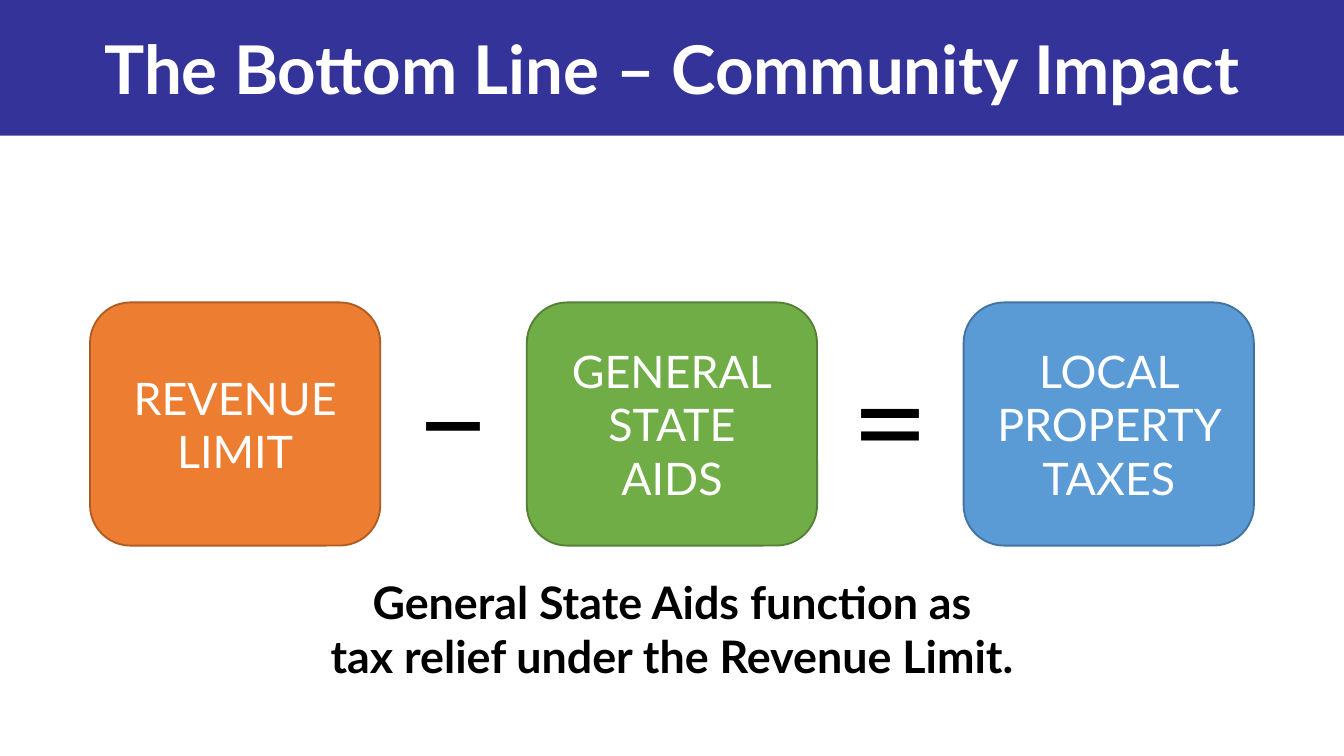
from dataclasses import dataclass

from pptx import Presentation
from pptx.dml.color import RGBColor
from pptx.enum.shapes import MSO_SHAPE
from pptx.enum.text import MSO_ANCHOR, PP_ALIGN
from pptx.util import Inches, Pt

RECT = MSO_SHAPE.RECTANGLE
ROUNDED = MSO_SHAPE.ROUNDED_RECTANGLE
TOP, MIDDLE = MSO_ANCHOR.TOP, MSO_ANCHOR.MIDDLE
CENTER = PP_ALIGN.CENTER

FONT = "Lato"
WHITE, BLACK, NAVY = "FFFFFF", "000000", "333399"
SLIDE_W = 10
SLIDE_H = SLIDE_W * 9 / 16
TERM_W, TERM_H, TERM_TOP = 2.16, 1.81, 2.25
TERM_LEFT, TERM_STEP = 0.67, 3.25


@dataclass
class Term:
    text: str
    fill: str
    line: str


@dataclass
class Operator:
    text: str
    left: float
    top: float


TERMS = [
    Term("REVENUE LIMIT", "ED7D31", "AF5C24"),
    Term("GENERAL\nSTATE\nAIDS", "70AD47", "538035"),
    Term("LOCAL PROPERTY TAXES", "5B9BD5", "43739E"),
]
OPERATORS = [Operator("–", 2.98, 2.42), Operator("=", 6.23, 2.45)]


def rgb(color: str) -> RGBColor:
    return RGBColor.from_string(color)


def write(sp, text: str, size: float, color: str, bold: bool = False,
          anchor=MIDDLE, wrap: bool = True) -> None:
    """Put one centred paragraph in a shape, with a line break at each newline."""
    tf = sp.text_frame
    tf.word_wrap = wrap
    tf.vertical_anchor = anchor
    p = tf.paragraphs[0]
    p.alignment = CENTER
    for i, line in enumerate(text.split("\n")):
        if i:
            p.add_line_break()
        r = p.add_run()
        r.text = line
        r.font.name = FONT
        r.font.size = Pt(size)
        r.font.bold = bold
        r.font.color.rgb = rgb(color)


def add_banner(s, text: str) -> None:
    sp = s.shapes.add_shape(RECT, Inches(0), Inches(0), Inches(SLIDE_W), Inches(1.01))
    sp.shadow.inherit = False
    sp.fill.solid()
    sp.fill.fore_color.rgb = rgb(NAVY)
    sp.line.fill.background()
    write(sp, text, 36, WHITE, bold=True)


def add_term(s, term: Term, left: float) -> None:
    sp = s.shapes.add_shape(ROUNDED, Inches(left), Inches(TERM_TOP),
                            Inches(TERM_W), Inches(TERM_H))
    sp.shadow.inherit = False
    sp.fill.solid()
    sp.fill.fore_color.rgb = rgb(term.fill)
    sp.line.color.rgb = rgb(term.line)
    sp.line.width = Pt(1)
    write(sp, term.text, 24, WHITE)


def add_label(s, text: str, left: float, top: float, width: float, height: float,
              size: float, bold: bool = False) -> None:
    sp = s.shapes.add_textbox(Inches(left), Inches(top), Inches(width), Inches(height))
    write(sp, text, size, BLACK, bold, TOP, wrap=False)


def main() -> None:
    prs = Presentation()
    prs.slide_width, prs.slide_height = Inches(SLIDE_W), Inches(SLIDE_H)
    s = prs.slides.add_slide(prs.slide_layouts[6])

    add_banner(s, "The Bottom Line – Community Impact")
    for i, term in enumerate(TERMS):
        add_term(s, term, TERM_LEFT + i * TERM_STEP)
    for op in OPERATORS:
        add_label(s, op.text, op.left, op.top, 0.79, 1.31, 72)
    add_label(s, "General State Aids function as\ntax relief under the Revenue Limit.",
              2.32, 4.23, 5.36, 0.91, 24, bold=True)

    prs.save("out.pptx")


if __name__ == "__main__":
    main()
